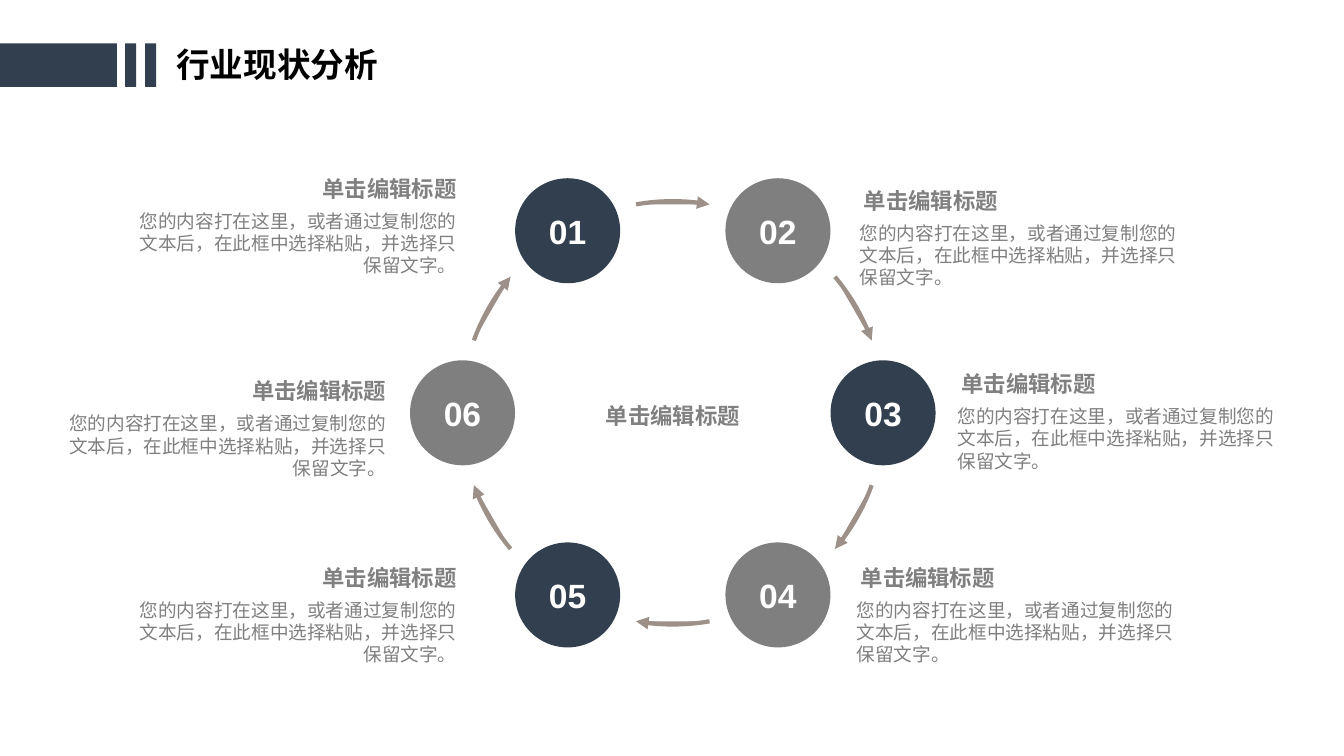
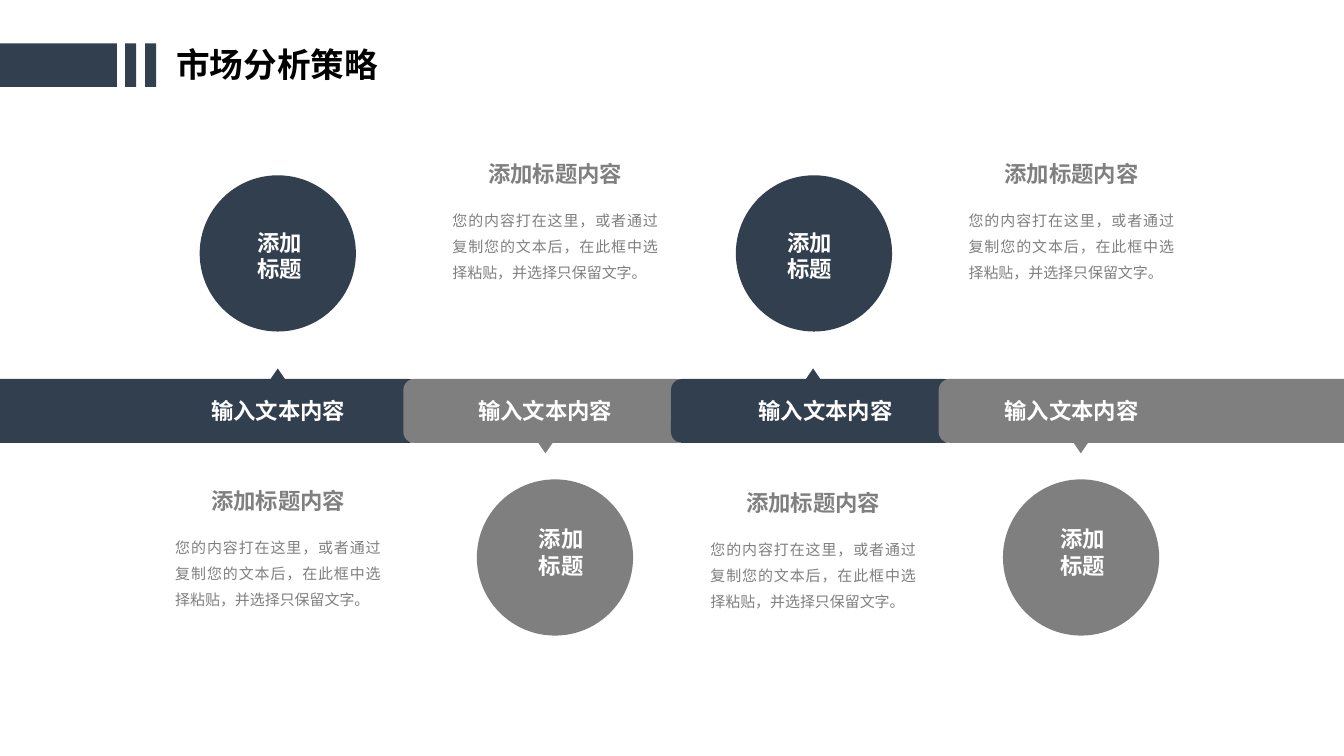
"""Build two analysis slides: a six-step ring and a four-part market band."""
import math
from dataclasses import dataclass

import lxml.etree
import pptx
import pptx.dml.color
import pptx.enum.lang
import pptx.enum.shapes
import pptx.enum.text
import pptx.oxml.ns
import pptx.util

Pt = pptx.util.Pt
SHAPES = pptx.enum.shapes.MSO_SHAPE
ALIGN = pptx.enum.text.PP_ALIGN
ANCHOR = pptx.enum.text.MSO_ANCHOR


@dataclass(frozen=True)
class Theme:
    navy: str = "323F4F"
    gray: str = "7F7F7F"
    text: str = "808080"
    arrow: str = "9C9088"
    white: str = "FFFFFF"
    black: str = "000000"
    font: str = "Arial"
    title_size: float = 24
    heading_size: float = 16
    body_size: float = 13.3
    note_size: float = 10.7


THEME = Theme()
SLIDE_SIZE = (960, 540)
TITLE_BOX = (118.8, 28.1, 253.4, 36)
TITLE_INSETS = (7.2, 3.6, 7.2, 3.6)
BANDS = ((0, 83.5), (89.3, 7.9), (103.7, 7.9))
BAND_TOP, BAND_HEIGHT = 31, 31
BODY = "您的内容打在这里，或者通过复制您的文本后，在此框中选择粘贴，并选择只保留文字。"

RING_TITLE = "行业现状分析"
RING_HEADING = "单击编辑标题"
RING_CENTER = (480.6, 294.9)
RING_RADIUS, ARROW_RADIUS, STEP_SIZE = 150.2, 151.2, 75
ARROW_SWEEP, ARROW_SEGMENTS = 20, 10
CAPTION_WIDTH, CAPTION_HEIGHT, CAPTION_RISE = 246.2, 55.4, 26.3
CAPTIONS = (
    ("01", 87.1, 146.2, ALIGN.RIGHT),
    ("02", 607, 154.8, ALIGN.LEFT),
    ("03", 676.8, 285.8, ALIGN.LEFT),
    ("04", 604.8, 424.1, ALIGN.LEFT),
    ("05", 87.1, 424.1, ALIGN.RIGHT),
    ("06", 36.7, 290.9, ALIGN.RIGHT),
)

MARKET_TITLE = "市场分析策略"
MARKET_LABEL, MARKET_HEADING, MARKET_WORD = "输入文本内容", "添加标题内容", "添加标题"
BAR_TOP, BAR_HEIGHT, BAR_OVERLAP, BAR_BLEED = 270.7, 45.6, 12, 11.5
FIRST_POINTER, COLUMN_PITCH, POINTER_TO_EDGE = 198.4, 191.2, 101.5
POINTER_WIDTH, POINTER_HEIGHT, POINTER_OUT = 13.7, 10, 7.5
DISC_SIZE, NOTE_WIDTH, NOTE_DROP = 111.6, 147, 31
COLUMNS = (
    {"disc": 198.4, "word": 199.8, "label": 198.7, "note": 198.7, "note_top": 347.8},
    {"disc": 396.4, "word": 401, "label": 389.5, "note": 396.7, "note_top": 114.5},
    {"disc": 581.4, "word": 578.5, "label": 589.7, "note": 581, "note_top": 349.2},
    {"disc": 772.2, "word": 773.6, "label": 765.4, "note": 765.4, "note_top": 114.5},
)


def rgb(color):
    return pptx.dml.color.RGBColor.from_string(color)


def write(shape, text, size, color, bold=False, align=ALIGN.LEFT,
          anchor=ANCHOR.TOP, insets=(0, 0, 0, 0), spacing=None):
    frame = shape.text_frame
    frame.text = text
    frame.word_wrap = True
    frame.auto_size = pptx.enum.text.MSO_AUTO_SIZE.NONE
    frame.vertical_anchor = anchor
    (frame.margin_left, frame.margin_top,
     frame.margin_right, frame.margin_bottom) = (Pt(inset) for inset in insets)
    paragraph = frame.paragraphs[0]
    paragraph.alignment = align
    if spacing:
        paragraph.line_spacing = Pt(spacing)
    run = paragraph.runs[0]
    run.font.size = Pt(size)
    run.font.bold = bold
    run.font.color.rgb = rgb(color)
    run.font.name = THEME.font
    run.font.language_id = pptx.enum.lang.MSO_LANGUAGE_ID.SIMPLIFIED_CHINESE
    east_asian = lxml.etree.SubElement(
        run._r.get_or_add_rPr(), pptx.oxml.ns.qn("a:ea"))
    east_asian.set("typeface", THEME.font)


def add_text(slide, box, text, size, color, **style):
    shape = slide.shapes.add_textbox(*(Pt(length) for length in box))
    write(shape, text, size, color, **style)


def add_filled(slide, kind, box, color):
    shape = slide.shapes.add_shape(kind, *(Pt(length) for length in box))
    shape.shadow.inherit = False
    shape.fill.solid()
    shape.fill.fore_color.rgb = rgb(color)
    shape.line.fill.background()
    return shape


def add_titled_slide(presentation, title):
    slide = presentation.slides.add_slide(presentation.slide_layouts[5])
    shape = slide.shapes.title
    shape.left, shape.top, shape.width, shape.height = (
        Pt(length) for length in TITLE_BOX)
    write(shape, title, THEME.title_size, THEME.black, bold=True, insets=TITLE_INSETS)
    for left, width in BANDS:
        add_filled(slide, SHAPES.RECTANGLE,
                   (left, BAND_TOP, width, BAND_HEIGHT), THEME.navy)
    return slide


def ring_point(radius, degrees):
    angle = math.radians(degrees)
    return (RING_CENTER[0] + radius * math.cos(angle),
            RING_CENTER[1] + radius * math.sin(angle))


def add_arc_arrow(slide, middle):
    start = middle - ARROW_SWEEP / 2
    points = [
        tuple(Pt(value) for value in ring_point(
            ARROW_RADIUS, start + ARROW_SWEEP * step / ARROW_SEGMENTS))
        for step in range(ARROW_SEGMENTS + 1)
    ]
    builder = slide.shapes.build_freeform(*points[0])
    builder.add_line_segments(points[1:], close=False)
    arrow = builder.convert_to_shape()
    arrow.shadow.inherit = False
    arrow.fill.solid()
    arrow.fill.fore_color.rgb = rgb(THEME.arrow)
    arrow.line.color.rgb = rgb(THEME.arrow)
    arrow.line.width = Pt(3)
    head = lxml.etree.SubElement(
        arrow.line._get_or_add_ln(), pptx.oxml.ns.qn("a:tailEnd"))
    head.set("type", "triangle")


def add_ring_slide(presentation):
    slide = add_titled_slide(presentation, RING_TITLE)
    center_x, center_y = RING_CENTER
    add_text(slide, (center_x - 82.5, center_y - 80.4, 165, 165), RING_HEADING,
             THEME.heading_size, THEME.text, bold=True,
             align=ALIGN.CENTER, anchor=ANCHOR.MIDDLE)
    for index, (number, left, top, align) in enumerate(CAPTIONS):
        angle = -120 + 60 * index
        x, y = ring_point(RING_RADIUS, angle)
        step = add_filled(
            slide, SHAPES.OVAL,
            (x - STEP_SIZE / 2, y - STEP_SIZE / 2, STEP_SIZE, STEP_SIZE),
            THEME.gray if index % 2 else THEME.navy)
        write(step, number, THEME.title_size, THEME.white, bold=True,
              align=ALIGN.CENTER, anchor=ANCHOR.MIDDLE)
        add_arc_arrow(slide, angle + 30)
        add_text(slide, (left, top - CAPTION_RISE, CAPTION_WIDTH, 28.8),
                 RING_HEADING, THEME.heading_size, THEME.text, bold=True,
                 align=align, insets=(10, 5, 7.2, 5))
        add_text(slide, (left, top, CAPTION_WIDTH, CAPTION_HEIGHT), BODY,
                 THEME.body_size, THEME.text, align=align,
                 insets=(7.2, 3.6, 7.2, 3.6))


def add_bar(slide, index, color):
    pointer = FIRST_POINTER + COLUMN_PITCH * index
    left = pointer - POINTER_TO_EDGE if index else -BAR_BLEED
    right = pointer + POINTER_TO_EDGE
    if index == len(COLUMNS) - 1:
        right = SLIDE_SIZE[0] + BAR_BLEED
    bar = add_filled(slide, SHAPES.ROUNDED_RECTANGLE,
                     (left, BAR_TOP, right - left, BAR_HEIGHT), color)
    bar.adjustments[0] = 0.17
    below = index % 2
    top = (BAR_TOP + BAR_HEIGHT + POINTER_OUT - POINTER_HEIGHT if below
           else BAR_TOP - POINTER_OUT)
    triangle = add_filled(
        slide, SHAPES.ISOSCELES_TRIANGLE,
        (pointer - POINTER_WIDTH / 2, top, POINTER_WIDTH, POINTER_HEIGHT), color)
    triangle.rotation = 180 if below else 0


def add_market_slide(presentation):
    slide = add_titled_slide(presentation, MARKET_TITLE)
    colors = [THEME.gray if index % 2 else THEME.navy for index in range(len(COLUMNS))]
    for index, color in enumerate(colors):
        add_bar(slide, index, color)
    heading_style = {"bold": True, "align": ALIGN.CENTER}
    for index, (column, color) in enumerate(zip(COLUMNS, colors)):
        disc_top, word_top = (342.4, 375.1) if index % 2 else (125.2, 163.4)
        add_filled(slide, SHAPES.OVAL,
                   (column["disc"] - DISC_SIZE / 2, disc_top, DISC_SIZE, DISC_SIZE),
                   color)
        note_left = column["note"] - NOTE_WIDTH / 2
        headings = (
            (MARKET_WORD, column["word"], word_top, 44, 38.9, THEME.white),
            (MARKET_LABEL, column["label"], 283.7, 125.3, 19.4, THEME.white),
            (MARKET_HEADING, column["note"], column["note_top"], 125.3, 19.4, THEME.text),
        )
        for text, middle, top, width, height, text_color in headings:
            add_text(slide, (middle - width / 2, top, width, height), text,
                     THEME.heading_size, text_color, **heading_style)
        add_text(slide, (note_left, column["note_top"] + NOTE_DROP, NOTE_WIDTH, 55.8),
                 BODY, THEME.note_size, THEME.text, align=ALIGN.JUSTIFY, spacing=18.6)


def main():
    presentation = pptx.Presentation()
    presentation.slide_width, presentation.slide_height = (
        Pt(length) for length in SLIDE_SIZE)
    add_ring_slide(presentation)
    add_market_slide(presentation)
    presentation.save("out.pptx")


if __name__ == "__main__":
    main()
